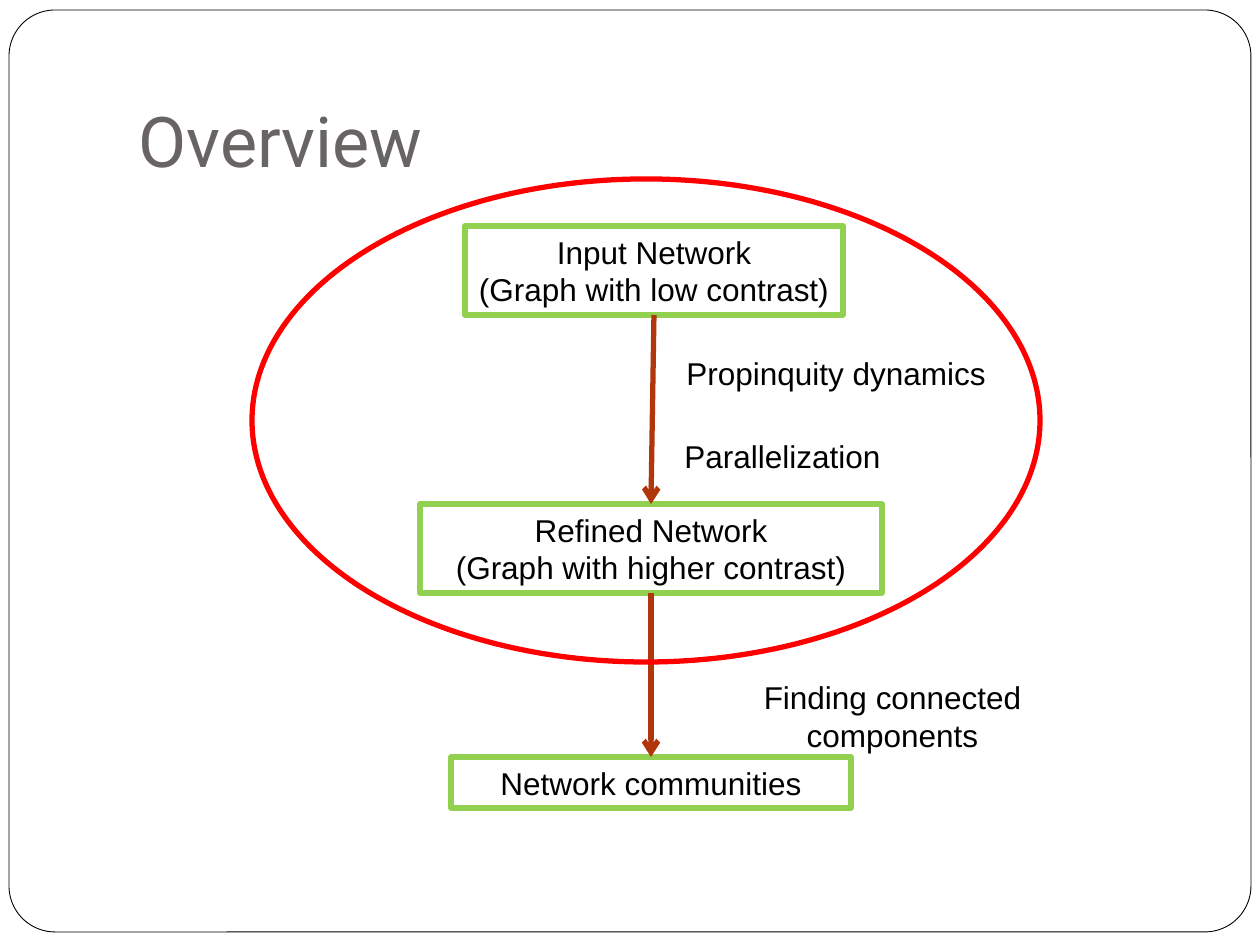
from lxml import etree
from pptx import Presentation
from pptx.dml.color import RGBColor
from pptx.enum.shapes import MSO_CONNECTOR, MSO_SHAPE
from pptx.enum.text import MSO_ANCHOR, PP_ALIGN
from pptx.oxml.ns import qn
from pptx.util import Emu, Pt

LEFT, CENTER = PP_ALIGN.LEFT, PP_ALIGN.CENTER
MIDDLE, BOTTOM = MSO_ANCHOR.MIDDLE, MSO_ANCHOR.BOTTOM
RECT, OVAL, ROUND = MSO_SHAPE.RECTANGLE, MSO_SHAPE.OVAL, MSO_SHAPE.ROUNDED_RECTANGLE
STRAIGHT = MSO_CONNECTOR.STRAIGHT
BLACK = RGBColor(0x00, 0x00, 0x00)
WHITE = RGBColor(0xFF, 0xFF, 0xFF)
GRAY = RGBColor(0x69, 0x64, 0x64)
GREEN = RGBColor(0x92, 0xD0, 0x50)
RUST = RGBColor(0xB1, 0x36, 0x0B)
RED = RGBColor(0xFF, 0x00, 0x00)

# Content: places are left, top, width, height in px
TITLE = "Overview"
STEPS = [
    ("Input Network\n(Graph with low contrast)", (465, 226, 378, 89)),
    ("Refined Network\n(Graph with higher contrast)", (420, 504, 462, 89)),
    ("Network communities", (451, 757, 400, 51)),
]
LABELS = [
    ("Propinquity dynamics", (674, 348, 368, 51), LEFT),
    ("Parallelization", (672, 431, 231, 51), LEFT),
    ("Finding connected components", (672, 672, 441, 89), CENTER),
]
FRAME = (9, 10, 1242, 922)
FOCUS = (252, 179, 788, 483)
HEAD = (126, 38, 1071, 157)


def px(num):
    return Emu(round(num * 914400 / 126))


def spot(place):
    return [px(num) for num in place]


def style(frame, align, font, size, color):
    for para in frame.paragraphs:
        para.alignment = align
        for run in para.runs:
            run.font.name = font
            run.font.size = Pt(size)
            run.font.color.rgb = color


def outline(slide, kind, place, color, width):
    shape = slide.shapes.add_shape(kind, *spot(place))
    shape.shadow.inherit = False
    shape.fill.background()
    shape.line.color.rgb = color
    shape.line.width = Pt(width)
    return shape


def add_step(slide, text, place):
    box = outline(slide, RECT, place, GREEN, 3)
    box.text_frame.text = text
    box.text_frame.vertical_anchor = MIDDLE
    style(box.text_frame, CENTER, "Arial", 18, BLACK)
    return box


def add_label(slide, text, place, align):
    frame = slide.shapes.add_textbox(*spot(place)).text_frame
    frame.word_wrap = True
    frame.text = text
    style(frame, align, "Arial", 18, BLACK)


def add_arrow(slide, upper, lower):
    arrow = slide.shapes.add_connector(STRAIGHT, 0, 0, 0, 0)
    arrow.begin_connect(upper, 2)
    arrow.end_connect(lower, 0)
    arrow.line.color.rgb = RUST
    arrow.line.width = Pt(3)
    etree.SubElement(arrow.line._get_or_add_ln(), qn("a:tailEnd"), type="arrow")
    etree.SubElement(arrow._element.spPr, qn("a:effectLst"))


def main():
    deck = Presentation()
    deck.slide_width, deck.slide_height = px(1260), px(945)
    slide = deck.slides.add_slide(deck.slide_layouts[5])

    # Rounded frame, sent behind the title
    frame = outline(slide, ROUND, FRAME, BLACK, 0.5)
    frame.adjustments[0] = 0.05
    frame.fill.solid()
    frame.fill.fore_color.rgb = WHITE
    slide.shapes._spTree.insert(2, frame._element)

    # Title
    title = slide.shapes.title
    title.left, title.top, title.width, title.height = spot(HEAD)
    title.text_frame.text = TITLE
    title.text_frame.vertical_anchor = BOTTOM
    title.text_frame.margin_bottom = px(13)
    style(title.text_frame, LEFT, "Roboto", 40, GRAY)

    # Steps, joined in order by arrows
    boxes = [add_step(slide, *step) for step in STEPS]
    for upper, lower in zip(boxes, boxes[1:]):
        add_arrow(slide, upper, lower)
    for label in LABELS:
        add_label(slide, *label)

    # Ring around the first two steps
    outline(slide, OVAL, FOCUS, RED, 3)
    deck.save("out.pptx")


if __name__ == "__main__":
    main()
